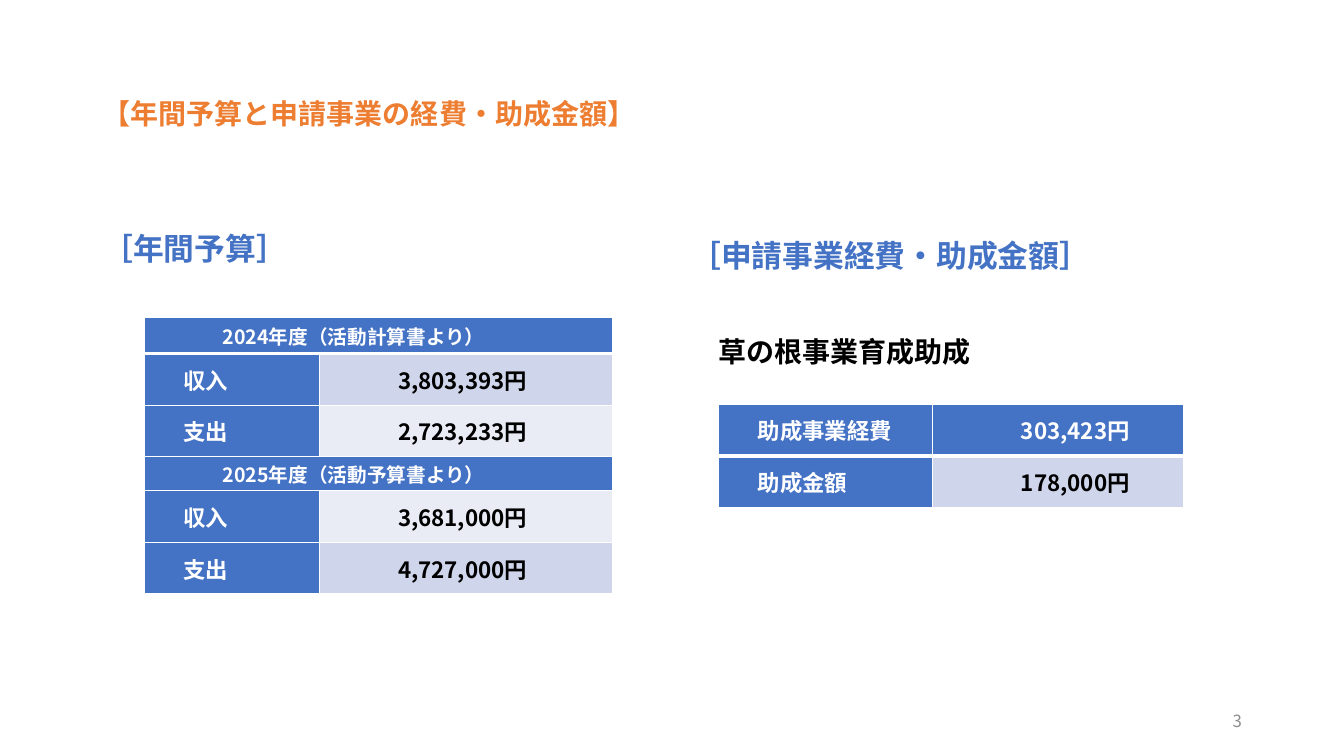
"""Build the slide on the annual budget and the grant amounts."""
from dataclasses import dataclass

from lxml import etree
from pptx import Presentation
from pptx import util as u
from pptx.dml.color import RGBColor
from pptx.enum import text
from pptx.oxml import ns

FONT = "Noto Sans CJK JP"
COLORS = {
    "orange": "ED7D31", "blue": "4472C4", "white": "FFFFFF", "black": "000000",
    "gray": "8C8C8C", "band": "CFD5EA", "light": "E9EBF5",
}
LEFT, RIGHT, JUSTIFY = text.PP_ALIGN.LEFT, text.PP_ALIGN.RIGHT, text.PP_ALIGN.JUSTIFY
MIDDLE = text.MSO_ANCHOR.MIDDLE
LABEL_INDENT = 0.81


@dataclass
class Label:
    """A line of text in its own box, in centimetres."""
    words: str
    left: float
    top: float
    width: float
    size: int
    color: str
    bold: bool = True
    align: text.PP_ALIGN = LEFT
    height: float = 1.4


@dataclass
class Row:
    """A table row; without a value its label spans both columns."""
    label: str
    value: str = ""
    fill: str = "blue"
    height: float = 1.3


@dataclass
class Grid:
    """A two-column table, in centimetres."""
    left: float
    top: float
    widths: tuple[float, float]
    value_indent: float
    rows: list[Row]


TITLE = Label("【年間予算と申請事業の経費・助成金額】", 2.33, 1.02, 29.21, 20, "orange", height=3.68)
LABELS = [
    Label("［年間予算］", 2.33, 5.56, 14.4, 22, "blue"),
    Label("［申請事業経費・助成金額］", 17.15, 5.72, 14.4, 22, "blue"),
    Label("草の根事業育成助成", 17.85, 8.16, 13.7, 20, "black"),
    Label("3", 23.93, 17.65, 7.62, 12, "gray", False, RIGHT, 1.02),
]
GRIDS = [
    Grid(3.63, 8.0, (4.42, 7.39), 1.8, [
        Row("2024年度（活動計算書より）", height=0.91),
        Row("収入", "3,803,393円", "band"),
        Row("支出", "2,723,233円", "light"),
        Row("2025年度（活動予算書より）", height=0.86),
        Row("収入", "3,681,000円", "light"),
        Row("支出", "4,727,000円", "band"),
    ]),
    Grid(18.11, 10.19, (5.38, 6.35), 2.06, [
        Row("助成事業経費", "303,423円"),
        Row("助成金額", "178,000円", "band"),
    ]),
]


def rgb(name: str) -> RGBColor:
    """Look up a named colour."""
    return RGBColor.from_string(COLORS[name])


def apply(target, values: dict) -> None:
    """Set every attribute named in the dict."""
    for name, value in values.items():
        setattr(target, name, value)


def write(tf, words: str, size: int, color: str, bold: bool, align, indent: float = 0) -> None:
    """Write one formatted paragraph into a text frame."""
    p = tf.paragraphs[0]
    p.alignment = align
    if indent:
        p._p.get_or_add_pPr().set("indent", str(u.Cm(indent)))
    r = p.add_run()
    r.text = words
    apply(r.font, {"name": FONT, "size": u.Pt(size), "bold": bold})
    r.font.color.rgb = rgb(color)
    etree.SubElement(r._r.get_or_add_rPr(), ns.qn("a:ea"), typeface=FONT)


def draw_label(sp, label: Label) -> None:
    """Place a text shape and fill in its words."""
    apply(sp, {name: u.Cm(getattr(label, name)) for name in ("left", "top", "width", "height")})
    apply(sp.text_frame, {"word_wrap": True, "vertical_anchor": MIDDLE,
                          "auto_size": text.MSO_AUTO_SIZE.NONE})
    write(sp.text_frame, label.words, label.size, label.color, label.bold, label.align)


def draw_borders(cell, heavy_top: bool, heavy_bottom: bool) -> None:
    """Give a cell white edges, heavy where the header row ends."""
    tc_pr = cell._tc.get_or_add_tcPr()
    widths = {"lnL": 1, "lnR": 1, "lnT": 3 if heavy_top else 1, "lnB": 3 if heavy_bottom else 1}
    for tag, points in widths.items():
        ln = etree.SubElement(tc_pr, ns.qn(f"a:{tag}"), w=str(u.Pt(points)))
        fill = etree.SubElement(ln, ns.qn("a:solidFill"))
        etree.SubElement(fill, ns.qn("a:srgbClr"), val=COLORS["white"])


def draw_grid(slide, grid: Grid) -> None:
    """Draw a table of labels and amounts."""
    height = sum(row.height for row in grid.rows)
    table = slide.shapes.add_table(len(grid.rows), 2, u.Cm(grid.left), u.Cm(grid.top),
                                   u.Cm(sum(grid.widths)), u.Cm(height)).table
    apply(table, {"first_row": False, "horz_banding": False})
    for column, width in zip(table.columns, grid.widths):
        column.width = u.Cm(width)
    for i, row in enumerate(grid.rows):
        table.rows[i].height = u.Cm(row.height)
        for cell, fill in zip(table.rows[i].cells, ("blue", row.fill)):
            apply(cell, {"vertical_anchor": MIDDLE, "margin_left": u.Cm(0.18),
                         "margin_right": u.Cm(0.18), "margin_top": 0, "margin_bottom": 0})
            draw_borders(cell, i == 1, i == 0)
            cell.fill.solid()
            cell.fill.fore_color.rgb = rgb(fill)
        label, value = table.rows[i].cells
        if row.value:
            color = "white" if row.fill == "blue" else "black"
            write(label.text_frame, row.label, 16, "white", True, JUSTIFY, LABEL_INDENT)
            write(value.text_frame, row.value, 16, color, True, JUSTIFY, grid.value_indent)
        else:
            label.merge(value)
            write(label.text_frame, row.label, 14, "white", True, JUSTIFY, grid.value_indent)


def main() -> None:
    """Assemble and save the slide."""
    prs = Presentation()
    apply(prs, {"slide_width": u.Cm(33.87), "slide_height": u.Cm(19.05)})
    slide = prs.slides.add_slide(prs.slide_layouts[5])
    draw_label(slide.shapes.title, TITLE)
    for label in LABELS:
        draw_label(slide.shapes.add_textbox(0, 0, 0, 0), label)
    for grid in GRIDS:
        draw_grid(slide, grid)
    prs.save("out.pptx")


if __name__ == "__main__":
    main()
